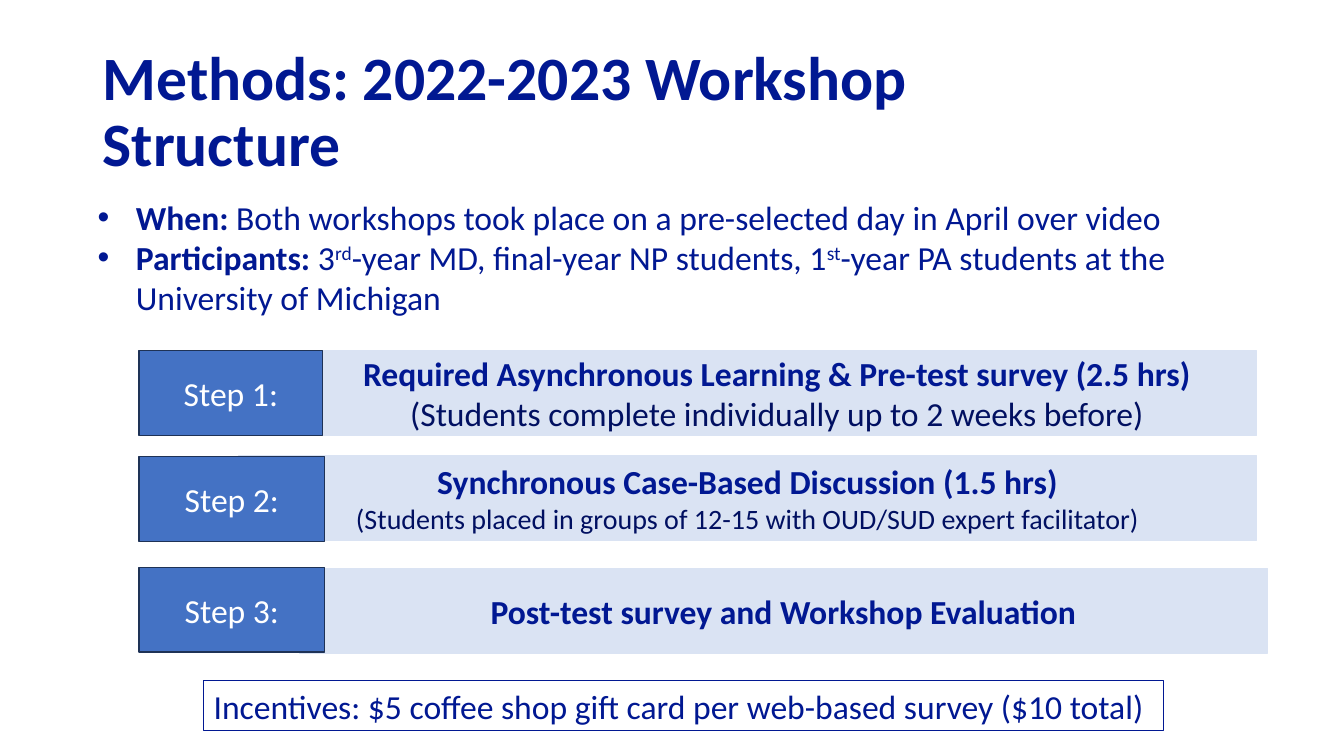
from lxml.etree import SubElement
from pptx import Presentation
from pptx.dml.color import RGBColor
from pptx.enum.shapes import MSO_SHAPE as Shape
from pptx.enum.text import MSO_ANCHOR as Anchor, PP_ALIGN as Align
from pptx.oxml.ns import qn
from pptx.util import Inches, Pt

NAVY = RGBColor(0x01, 0x18, 0x92)
DARK_NAVY = RGBColor(0x01, 0x10, 0x61)
BLUE = RGBColor(0x44, 0x72, 0xC4)
BLUE_EDGE = RGBColor(0x1E, 0x32, 0x56)
PALE_BLUE = RGBColor(0xDA, 0xE3, 0xF3)
WHITE = RGBColor(0xFF, 0xFF, 0xFF)

STEP_LEFT = 1.38
STEP_HEIGHT = 0.84

FACTS = [
    ("When:", [(" Both workshops took place on a pre-selected day in April over video", False)]),
    ("Participants:", [
        (" 3", False), ("rd", True),
        ("-year MD, final-year NP students, 1", False), ("st", True),
        ("-year PA students at the University of Michigan", False),
    ]),
]

STEPS = [
    ("Step 1:", 3.48, 1.82, (2.95, 3.48, 9.51),
     "Required Asynchronous Learning & Pre-test survey (2.5 hrs)",
     "(Students complete individually up to 2 weeks before)", 24),
    ("Step 2:", 4.53, 1.84, (2.37, 4.52, 10.09),
     "Synchronous Case-Based Discussion (1.5 hrs)",
     "(Students placed in groups of 12-15 with OUD/SUD expert facilitator)", 20),
    ("Step 3:", 5.63, 1.84, (2.97, 5.64, 9.6),
     "Post-test survey and Workshop Evaluation", None, 24),
]


def style(paragraph, size, color, bold=False, align=Align.LEFT):
    paragraph.alignment = align
    font = paragraph.font
    font.name = "Calibri"
    font.size = Pt(size)
    font.color.rgb = color
    font.bold = bold


def add_text_frame(slide, left, top, width, height, anchor=Anchor.TOP):
    box = slide.shapes.add_textbox(Inches(left), Inches(top), Inches(width), Inches(height))
    frame = box.text_frame
    frame.word_wrap = True
    frame.vertical_anchor = anchor
    return frame


def add_panel(slide, left, top, width, height, fill, edge, edge_width=1):
    panel = slide.shapes.add_shape(
        Shape.RECTANGLE, Inches(left), Inches(top), Inches(width), Inches(height))
    panel.shadow.inherit = False
    panel.fill.solid()
    panel.fill.fore_color.rgb = fill
    panel.line.color.rgb = edge
    panel.line.width = Pt(edge_width)
    frame = panel.text_frame
    frame.word_wrap = True
    frame.vertical_anchor = Anchor.MIDDLE
    return frame


def add_title(slide, left, top, width, height):
    title = add_text_frame(slide, left, top, width, height, Anchor.MIDDLE).paragraphs[0]
    title.text = "Methods: 2022-2023 Workshop Structure"
    title.line_spacing = 0.9
    style(title, 44, NAVY, bold=True)


def add_bullet(paragraph):
    properties = paragraph._p.get_or_add_pPr()
    properties.set("marL", str(Inches(0.38)))
    properties.set("indent", str(-Inches(0.38)))
    SubElement(properties, qn("a:buFont")).set("typeface", "Arial")
    SubElement(properties, qn("a:buChar")).set("char", "•")


def add_facts(slide, left, top, width, height):
    frame = add_text_frame(slide, left, top, width, height)
    for index, (label, pieces) in enumerate(FACTS):
        fact = frame.add_paragraph() if index else frame.paragraphs[0]
        add_bullet(fact)
        style(fact, 24, NAVY)
        heading = fact.add_run()
        heading.text = label
        heading.font.bold = True
        for words, raised in pieces:
            piece = fact.add_run()
            piece.text = words
            if raised:
                piece.font._element.set("baseline", "30000")


def add_step(slide, label, top, label_width, band, heading, detail, detail_size):
    band_left, band_top, band_width = band
    activity = add_panel(slide, band_left, band_top, band_width, STEP_HEIGHT, PALE_BLUE, PALE_BLUE)
    activity.paragraphs[0].text = heading
    style(activity.paragraphs[0], 24, NAVY, bold=True, align=Align.CENTER)
    if detail:
        note = activity.add_paragraph()
        note.text = detail
        style(note, detail_size, DARK_NAVY, align=Align.CENTER)
    step = add_panel(slide, STEP_LEFT, top, label_width, STEP_HEIGHT, BLUE, BLUE_EDGE).paragraphs[0]
    step.text = label
    style(step, 24, WHITE, align=Align.CENTER)


def add_incentives(slide, left, top, width, height):
    incentives = add_panel(slide, left, top, width, height, WHITE, NAVY, 0.75).paragraphs[0]
    incentives.text = "Incentives: $5 coffee shop gift card per web-based survey ($10 total)"
    style(incentives, 24, NAVY)


def main():
    deck = Presentation()
    deck.slide_width = Inches(13.33)
    deck.slide_height = Inches(7.5)
    slide = deck.slides.add_slide(deck.slide_layouts[6])
    add_title(slide, 0.92, 0.4, 10.42, 1.45)
    add_facts(slide, 0.87, 1.9, 11.96, 1.4)
    for step in STEPS:
        add_step(slide, *step)
    add_incentives(slide, 2.02, 6.75, 9.52, 0.5)
    deck.save("out.pptx")


if __name__ == "__main__":
    main()
